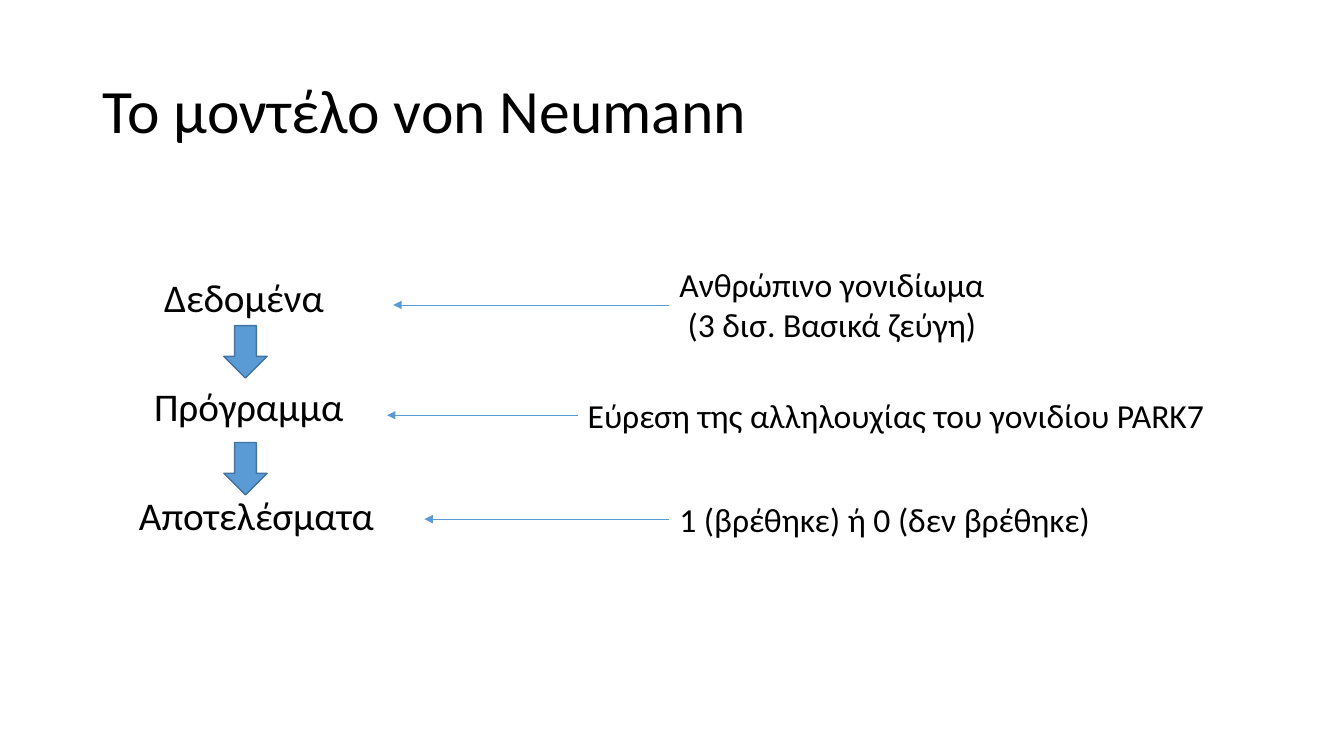
from lxml import etree
from pptx import Presentation
from pptx.dml.color import RGBColor
from pptx.enum import shapes, text
from pptx.oxml import ns
from pptx.util import Inches, Pt

BLUE = "5B9BD5"


def colour(value):
    return RGBColor.from_string(value)


def add_label(slide, box, lines, size, wrap=False):
    frame = slide.shapes.add_textbox(*map(Inches, box)).text_frame
    frame.word_wrap = wrap
    frame.auto_size = text.MSO_AUTO_SIZE.SHAPE_TO_FIT_TEXT
    for index, line in enumerate(lines):
        paragraph = frame.paragraphs[0] if index == 0 else frame.add_paragraph()
        if index:
            paragraph.alignment = text.PP_ALIGN.CENTER
        run = paragraph.add_run()
        run.text = line
        run.font.size = Pt(size)
        run.font.name = "Calibri"
        run.font.color.rgb = colour("000000")
    return frame


def add_title(slide, title):
    frame = add_label(slide, (0.92, 0.4, 11.5, 1.45), [title], 44, True)
    frame.auto_size = text.MSO_AUTO_SIZE.NONE
    frame.vertical_anchor = text.MSO_ANCHOR.MIDDLE
    frame.paragraphs[0].line_spacing = 0.9


def add_down_arrow(slide, top):
    arrow = slide.shapes.add_shape(
        shapes.MSO_SHAPE.DOWN_ARROW,
        Inches(2.22), Inches(top), Inches(0.43), Inches(0.52))
    arrow.shadow.inherit = False
    arrow.fill.solid()
    arrow.fill.fore_color.rgb = colour(BLUE)
    arrow.line.color.rgb = colour("43739E")
    arrow.line.width = Pt(1)


def add_pointer(slide, start, end, y):
    pointer = slide.shapes.add_connector(
        shapes.MSO_CONNECTOR.STRAIGHT,
        Inches(start), Inches(y), Inches(end), Inches(y))
    pointer.line.color.rgb = colour(BLUE)
    pointer.line.width = Pt(0.5)
    properties = pointer._element.spPr
    outline = properties.find(ns.qn("a:ln"))
    etree.SubElement(outline, ns.qn("a:tailEnd"), type="triangle")
    etree.SubElement(properties, ns.qn("a:effectLst"))


def main():
    deck = Presentation()
    deck.slide_width, deck.slide_height = Inches(13.33), Inches(7.5)
    slide = deck.slides.add_slide(deck.slide_layouts[6])

    add_title(slide, "Το μοντέλο von Neumann")

    stages = [
        ("Δεδομένα", 1.53, 2.66, 1.8),
        ("Πρόγραμμα", 1.43, 3.74, 2.1),
        ("Αποτελέσματα", 1.28, 4.83, 2.56),
    ]
    for stage, left, top, width in stages:
        add_label(slide, (left, top, width, 0.57), [stage], 28)

    for top in (3.23, 4.39):
        add_down_arrow(slide, top)

    examples = [
        (["Ανθρώπινο γονιδίωμα", "(3 δισ. Βασικά ζεύγη)"],
         (6.64, 2.57, 3.42, 0.91), 3.9, False),
        (["Εύρεση της αλληλουχίας του γονιδίου PARK7"],
         (5.73, 3.87, 6.4, 0.5), 3.84, True),
        (["1 (βρέθηκε) ή 0 (δεν βρέθηκε)"],
         (6.64, 4.9, 4.3, 0.5), 4.21, False),
    ]
    for lines, box, pointer_end, wrap in examples:
        left, top, _, height = box
        add_label(slide, box, lines, 24, wrap)
        add_pointer(slide, left, pointer_end, top + height / 2)

    deck.save("out.pptx")


if __name__ == "__main__":
    main()
